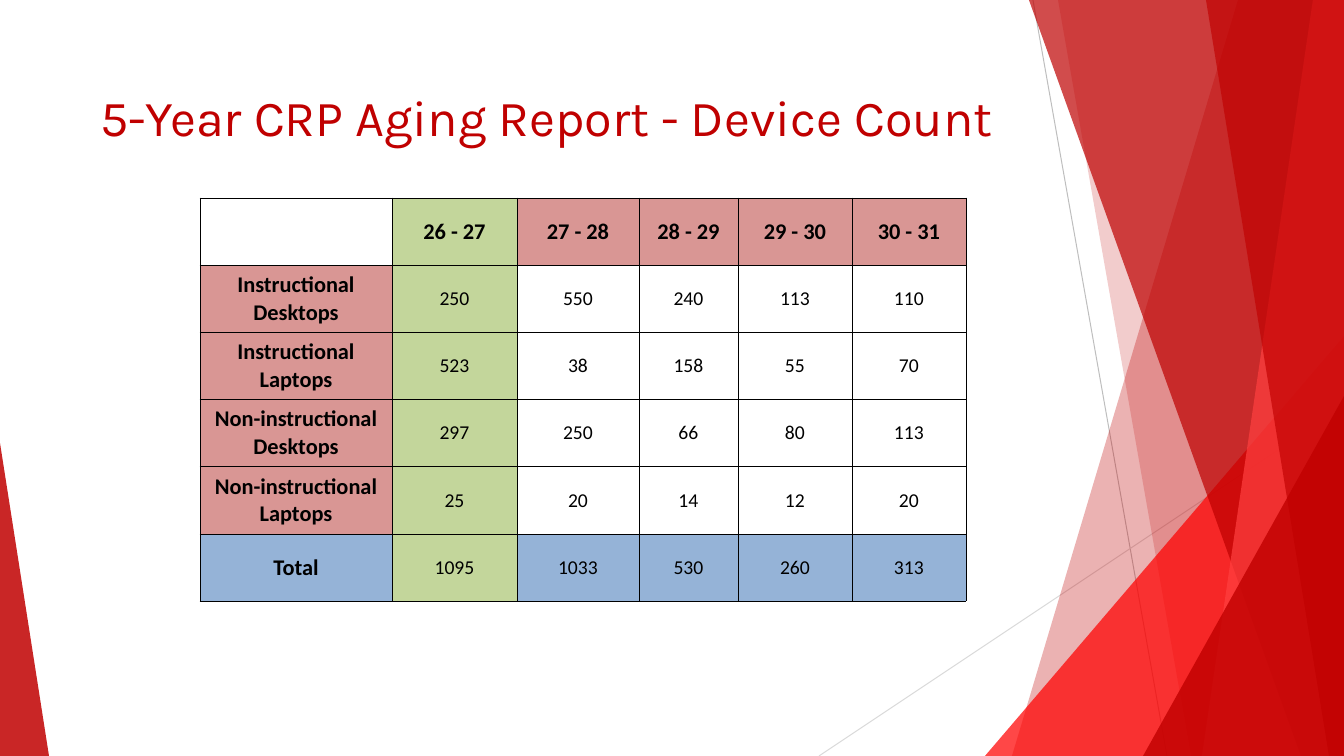
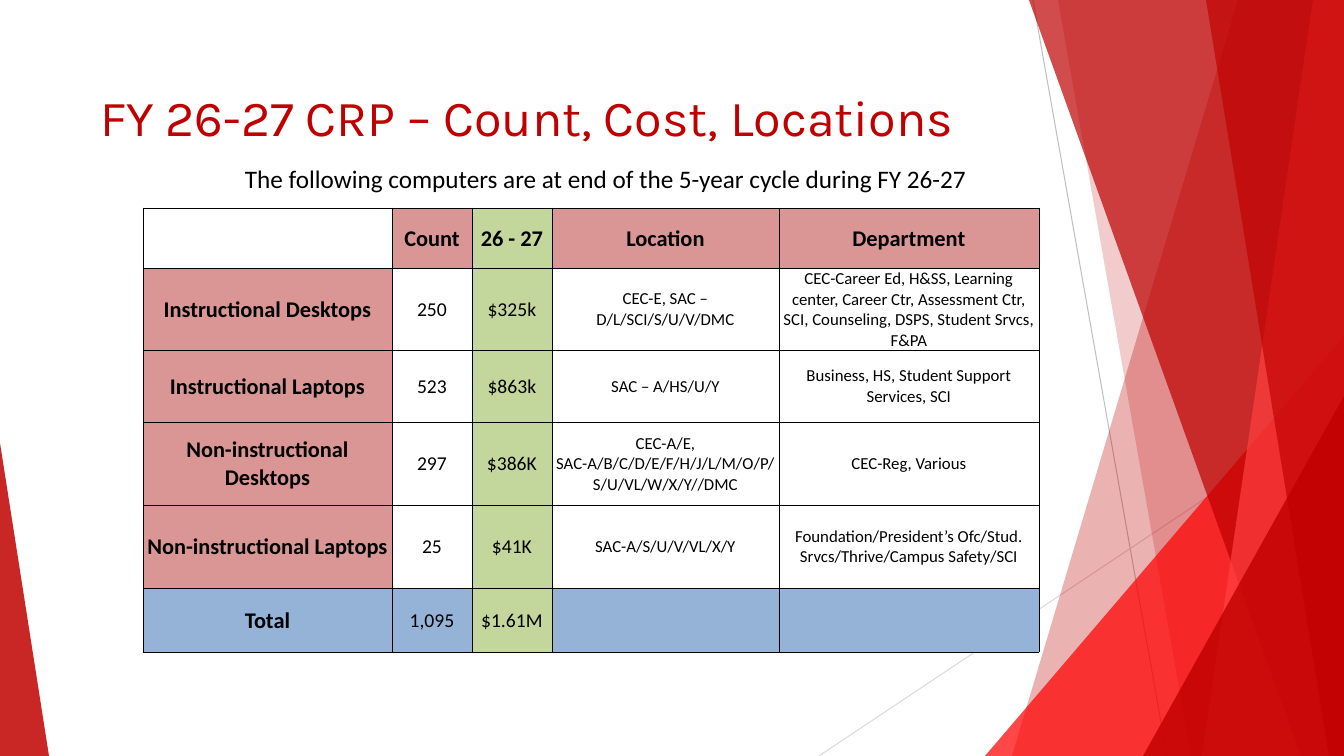
from lxml.etree import SubElement
from pptx import Presentation
from pptx.dml.color import RGBColor
from pptx.enum.shapes import MSO_CONNECTOR as Connector
from pptx.enum.text import MSO_ANCHOR as Anchor, MSO_AUTO_SIZE as AutoSize, PP_ALIGN as Align
from pptx.oxml.ns import qn
from pptx.util import Emu, Pt

WIDTH, HEIGHT = 1344, 756
EMU_PER_PX = 12192000 / WIDTH

RED, BLACK = "C00000", "000000"
HEADING_FILL, HIGHLIGHT_FILL, TOTAL_FILL = "D99694", "C3D69B", "95B3D7"
TITLE_FONT, BODY_FONT = "Karla", "Calibri"
HEADING_SIZE, COUNT_SIZE, DETAIL_SIZE = 16, 14, 12

HAIRLINES = [
    ((1033, 0), (1167, HEIGHT), "BEBEBE"),
    ((WIDTH, 406), (819, HEIGHT), "D9D9D9"),
]
RIGHT_EDGE = (WIDTH, HEIGHT)
FACETS = [
    ([(WIDTH, 0), (1238, 0), (1012, HEIGHT), RIGHT_EDGE], RED, 30),
    ([(WIDTH, 0), (1058, 0), (1191, HEIGHT), RIGHT_EDGE], RED, 20),
    ([(WIDTH, 336), (985, HEIGHT), RIGHT_EDGE], "FF0000", 72),
    ([(WIDTH, 0), (1029, 0), (1301, HEIGHT), RIGHT_EDGE], "BE0000", 70),
    ([(WIDTH, 0), (1313, 0), (1202, HEIGHT), RIGHT_EDGE], "FF4040", 70),
    ([(WIDTH, 0), (1206, 0), (1329, HEIGHT), RIGHT_EDGE], RED, 65),
    ([(WIDTH, 396), (1143, HEIGHT), RIGHT_EDGE], RED, 80),
    ([(0, 443), (0, HEIGHT), (49, HEIGHT)], RED, 85),
]


def px(length):
    return Emu(round(length * EMU_PER_PX))


def color(value):
    return RGBColor.from_string(value)


class Deck:
    def __init__(self):
        self.presentation = Presentation()
        self.presentation.slide_width = px(WIDTH)
        self.presentation.slide_height = px(HEIGHT)
        self.slide = None

    def new_slide(self, title):
        self.slide = self.presentation.slides.add_slide(self.presentation.slide_layouts[6])
        for start, end, line_color in HAIRLINES:
            self.hairline(start, end, line_color)
        for points, fill, opacity in FACETS:
            self.facet(points, fill, opacity)
        self.text(title, (100, 86, 1144, 64), TITLE_FONT, 36, RED)

    def hairline(self, start, end, line_color):
        connector = self.slide.shapes.add_connector(
            Connector.STRAIGHT, *map(px, start), *map(px, end))
        connector.line.color.rgb = color(line_color)
        connector.line.width = Pt(0.72)
        SubElement(connector._element.spPr, qn("a:effectLst"))

    def facet(self, points, fill, opacity):
        first, *others = [(px(x), px(y)) for x, y in points]
        builder = self.slide.shapes.build_freeform(*first)
        builder.add_line_segments(others, close=True)
        shape = builder.convert_to_shape()
        shape.shadow.inherit = False
        shape.line.fill.background()
        shape.fill.solid()
        shape.fill.fore_color.rgb = color(fill)
        fill_color = shape._element.spPr.find(qn("a:solidFill")).find(qn("a:srgbClr"))
        SubElement(fill_color, qn("a:alpha"), val=str(opacity * 1000))

    def run(self, paragraph, text, font, size, text_color, bold=False):
        run = paragraph.add_run()
        run.text = text
        run.font.name = font
        run.font.size = Pt(size)
        run.font.bold = bold
        run.font.color.rgb = color(text_color)

    def text(self, text, box, font, size, text_color):
        frame = self.slide.shapes.add_textbox(*map(px, box)).text_frame
        frame.margin_left = frame.margin_top = frame.margin_right = frame.margin_bottom = 0
        frame.word_wrap = True
        frame.auto_size = AutoSize.SHAPE_TO_FIT_TEXT
        self.run(frame.paragraphs[0], text, font, size, text_color)

    def borders(self, cell):
        properties = cell._tc.get_or_add_tcPr()
        for side in ("lnL", "lnR", "lnT", "lnB"):
            line = SubElement(properties, qn(f"a:{side}"), w=str(Pt(0.5)))
            SubElement(SubElement(line, qn("a:solidFill")), qn("a:srgbClr"), val=BLACK)

    def cell(self, cell, text, fill, size, bold):
        self.borders(cell)
        if fill:
            cell.fill.solid()
            cell.fill.fore_color.rgb = color(fill)
        else:
            cell.fill.background()
        cell.margin_left = cell.margin_top = cell.margin_right = px(1)
        cell.margin_bottom = 0
        cell.vertical_anchor = Anchor.MIDDLE
        paragraph = cell.text_frame.paragraphs[0]
        paragraph.alignment = Align.CENTER
        if text:
            self.run(paragraph, text, BODY_FONT, size, BLACK, bold)

    def table(self, position, widths, heights, rows, highlight, sizes):
        frame = self.slide.shapes.add_table(
            len(rows), len(widths), *map(px, position), px(sum(widths)), px(sum(heights)))
        table = frame.table
        table.first_row = table.horz_banding = False
        for column, width in zip(table.columns, widths):
            column.width = px(width)
        for table_row, height in zip(table.rows, heights):
            table_row.height = px(height)
        for row, texts in enumerate(rows):
            for column, text in enumerate(texts):
                heading = row == 0 or column == 0
                if column == highlight:
                    fill = HIGHLIGHT_FILL
                elif row == len(rows) - 1:
                    fill = TOTAL_FILL
                else:
                    fill = HEADING_FILL if heading and text else None
                size = HEADING_SIZE if heading else sizes[column - 1]
                self.cell(table.cell(row, column), text, fill, size, heading)


def main():
    deck = Deck()

    deck.new_slide("5-Year CRP Aging Report - Device Count")
    deck.table(
        (200, 198), [192, 125, 122, 99, 114, 114], [67, 67, 67, 67, 68, 67],
        [
            ["", "26 - 27", "27 - 28", "28 - 29", "29 - 30", "30 - 31"],
            ["Instructional Desktops", "250", "550", "240", "113", "110"],
            ["Instructional Laptops", "523", "38", "158", "55", "70"],
            ["Non-instructional Desktops", "297", "250", "66", "80", "113"],
            ["Non-instructional Laptops", "25", "20", "14", "12", "20"],
            ["Total", "1095", "1033", "530", "260", "313"],
        ],
        highlight=1, sizes=[COUNT_SIZE] * 5)

    deck.new_slide("FY 26-27 CRP – Count, Cost, Locations")
    deck.text("The following computers are at end of the 5-year cycle during FY 26-27",
              (245, 163, 763, 30), BODY_FONT, 18, BLACK)
    deck.table(
        (143, 208), [249, 80, 80, 227, 260], [60, 82, 72, 83, 83, 64],
        [
            ["", "Count", "26 - 27", "Location", "Department"],
            ["Instructional Desktops", "250", "$325k", "CEC-E, SAC – D/L/SCI/S/U/V/DMC",
             "CEC-Career Ed, H&SS, Learning center, Career Ctr, Assessment Ctr, "
             "SCI, Counseling, DSPS, Student Srvcs, F&PA"],
            ["Instructional Laptops", "523", "$863k", "SAC – A/HS/U/Y",
             "Business, HS, Student Support Services, SCI"],
            ["Non-instructional Desktops", "297", "$386K",
             "CEC-A/E, SAC-A/B/C/D/E/F/H/J/L/M/O/P/S/U/VL/W/X/Y//DMC",
             "CEC-Reg, Various"],
            ["Non-instructional Laptops", "25", "$41K", "SAC-A/S/U/V/VL/X/Y",
             "Foundation/President’s Ofc/Stud. Srvcs/Thrive/Campus Safety/SCI"],
            ["Total", "1,095", "$1.61M", "", ""],
        ],
        highlight=2, sizes=[COUNT_SIZE, COUNT_SIZE, DETAIL_SIZE, DETAIL_SIZE])

    deck.presentation.save("out.pptx")


if __name__ == "__main__":
    main()
